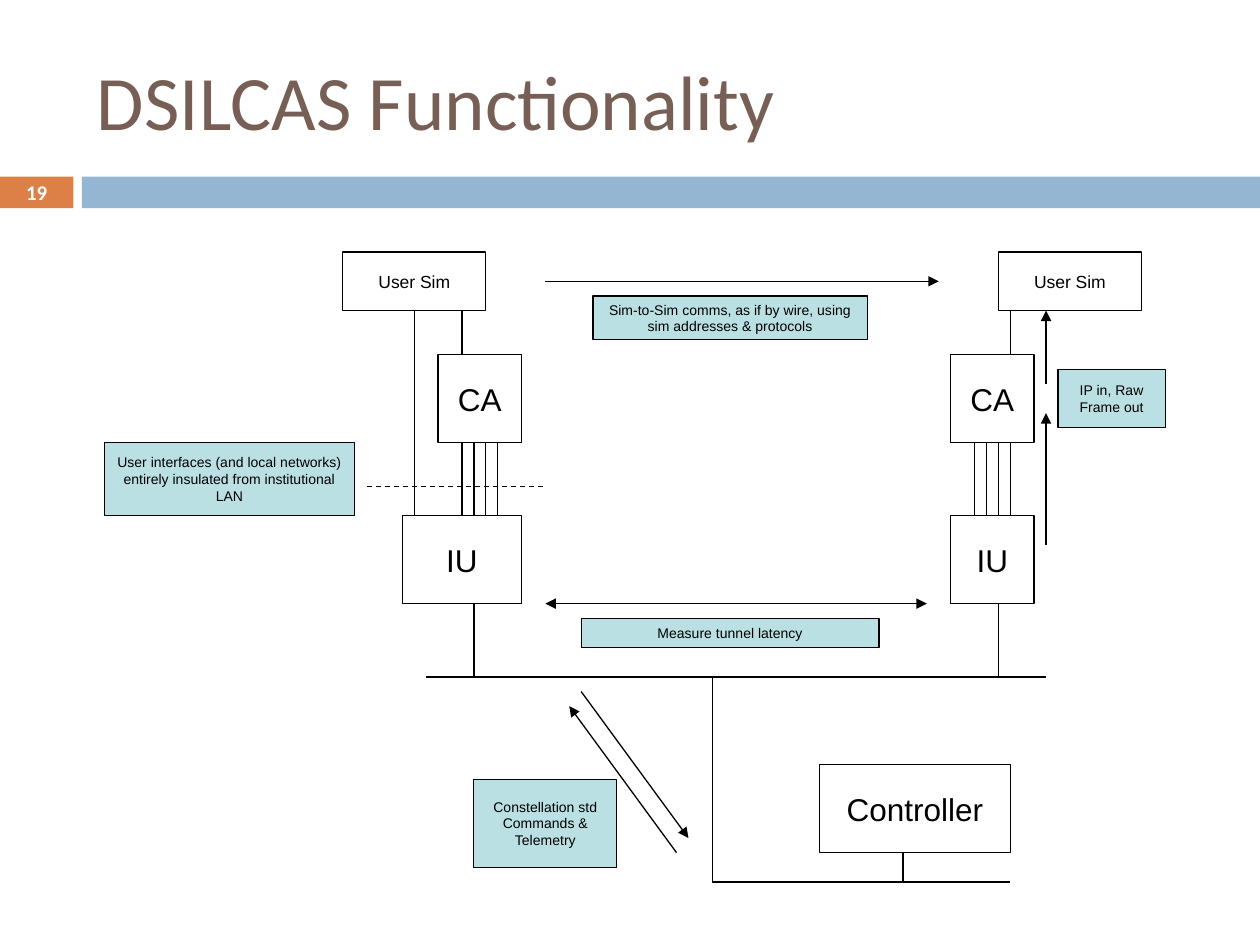
from dataclasses import dataclass
from lxml.etree import SubElement
from pptx import Presentation
from pptx.dml.color import RGBColor
from pptx.enum.dml import MSO_LINE
from pptx.enum.shapes import MSO_CONNECTOR, MSO_SHAPE
from pptx.enum.text import MSO_ANCHOR, MSO_AUTO_SIZE, PP_ALIGN
from pptx.oxml.ns import qn
from pptx.util import Cm, Pt


@dataclass(frozen=True)
class Theme:
    ink: str = "000000"
    white: str = "FFFFFF"
    brown: str = "775F55"
    orange: str = "DD8047"
    blue: str = "94B6D2"
    teal: str = "BBE0E3"
    head: str = "Calibri"
    body: str = "Arial"
    title: float = 44
    node: float = 18
    page: float = 11.9
    user: float = 10
    note: float = 8
    line: float = 0.75


THEME = Theme()

# The diagram sits on a fine grid: columns and rows count from the left User Sim.
LEFT, TOP = 6.91, 5.08
COL, ROW = 16.1 / 67, 12.7 / 43

# column, row, columns wide, rows high, text, size
NODES = [
    (8, 7, 7, 6, "CA", THEME.node),
    (5, 18, 10, 6, "IU", THEME.node),
    (51, 7, 7, 6, "CA", THEME.node),
    (51, 18, 7, 6, "IU", THEME.node),
    (40, 35, 16, 6, "Controller", THEME.node),
    (0, 0, 12, 4, "User Sim", THEME.user),
    (55, 0, 12, 4, "User Sim", THEME.user),
]
NOTES = [
    (20, 25, 25, 2, "Measure tunnel latency"),
    (60, 8, 9, 4, "IP in, Raw Frame out"),
    (11, 36, 12, 6, "Constellation std Commands & Telemetry"),
    (21, 3, 23, 3, "Sim-to-Sim comms, as if by wire, using sim addresses & protocols"),
    (-20, 13, 21, 5, "User interfaces (and local networks) entirely insulated from institutional LAN"),
]
# from column, from row, to column, to row
WIRES = [
    (7, 29, 59, 29),
    (11, 24, 11, 29),
    (55, 24, 55, 29),
    (10, 4, 10, 7),
    (56, 4, 56, 7),
    (6, 4, 6, 18),
    (31, 29, 31, 43),
    (31, 43, 56, 43),
    (47, 41, 47, 43),
]
ARROWS = [
    (59, 20, 59, 11),
    (59, 9, 59, 4),
    (28, 41, 19, 31),
    (20, 30, 29, 40),
    (17, 2, 50, 2),
]


def spot(col, row):
    return Cm(LEFT + col * COL), Cm(TOP + row * ROW)


def write(shape, text, size, color=THEME.ink, font=THEME.body, bold=False,
          align=PP_ALIGN.CENTER, wrap=True):
    frame = shape.text_frame
    frame.text = text
    frame.word_wrap = wrap
    frame.auto_size = MSO_AUTO_SIZE.NONE
    frame.vertical_anchor = MSO_ANCHOR.MIDDLE
    line = frame.paragraphs[0]
    line.alignment = align
    face = line.runs[0].font
    face.size, face.name, face.bold = Pt(size), font, bold
    face.color.rgb = RGBColor.from_string(color)


def block(slide, x, y, wide, high, fill=None, edge=None):
    shape = slide.shapes.add_shape(MSO_SHAPE.RECTANGLE, x, y, wide, high)
    shape.shadow.inherit = False
    if fill:
        shape.fill.solid()
        shape.fill.fore_color.rgb = RGBColor.from_string(fill)
    else:
        shape.fill.background()
    if edge:
        shape.line.color.rgb = RGBColor.from_string(edge)
        shape.line.width = Pt(THEME.line)
    else:
        shape.line.fill.background()
    return shape


def box(slide, col, row, cols, rows, text, size, fill=None, wrap=True):
    """Outlined box with text, placed on the grid."""
    shape = block(slide, *spot(col, row), Cm(cols * COL), Cm(rows * ROW),
                  fill, THEME.ink)
    write(shape, text, size, wrap=wrap)


def wire(slide, ends, tips=(), dash=False):
    """Line on the grid; tips names the ends (headEnd, tailEnd) with arrows."""
    start, stop = spot(*ends[:2]), spot(*ends[2:])
    link = slide.shapes.add_connector(MSO_CONNECTOR.STRAIGHT, *start, *stop)
    link.line.color.rgb = RGBColor.from_string(THEME.ink)
    link.line.width = Pt(THEME.line)
    if dash:
        link.line.dash_style = MSO_LINE.DASH
    stroke = link.line._get_or_add_ln()
    for tip in tips:
        SubElement(stroke, qn(f"a:{tip}"), type="triangle")
    SubElement(link._element.spPr, qn("a:effectLst"))


def header(slide):
    block(slide, 0, Cm(3.56), Cm(1.48), Cm(0.64), THEME.orange)
    block(slide, Cm(1.65), Cm(3.56), Cm(23.75), Cm(0.64), THEME.blue)
    title = slide.shapes.title
    title.left, title.top = Cm(1.7), Cm(0.64)
    title.width, title.height = Cm(22.66), Cm(2.74)
    write(title, "DSILCAS Functionality", THEME.title, THEME.brown,
          THEME.head, align=PP_ALIGN.LEFT)
    page = slide.shapes.add_textbox(0, Cm(3.53), Cm(1.48), Cm(0.69))
    write(page, "19", THEME.page, THEME.white, THEME.head, bold=True)


def main():
    deck = Presentation()
    deck.slide_width, deck.slide_height = Cm(25.4), Cm(19.05)
    slide = deck.slides.add_slide(deck.slide_layouts[5])
    header(slide)
    for node in NODES:
        box(slide, *node, wrap=False)
    for note in NOTES:
        box(slide, *note, THEME.note, fill=THEME.teal)
    for ends in WIRES:
        wire(slide, ends)
    for first in (10, 53):
        for col in range(first, first + 4):
            wire(slide, (col, 13, col, 18))
    for ends in ARROWS:
        wire(slide, ends, ["tailEnd"])
    wire(slide, (17, 24, 49, 24), ["headEnd", "tailEnd"])
    wire(slide, (2, 16, 17, 16), dash=True)
    deck.save("out.pptx")


if __name__ == "__main__":
    main()
